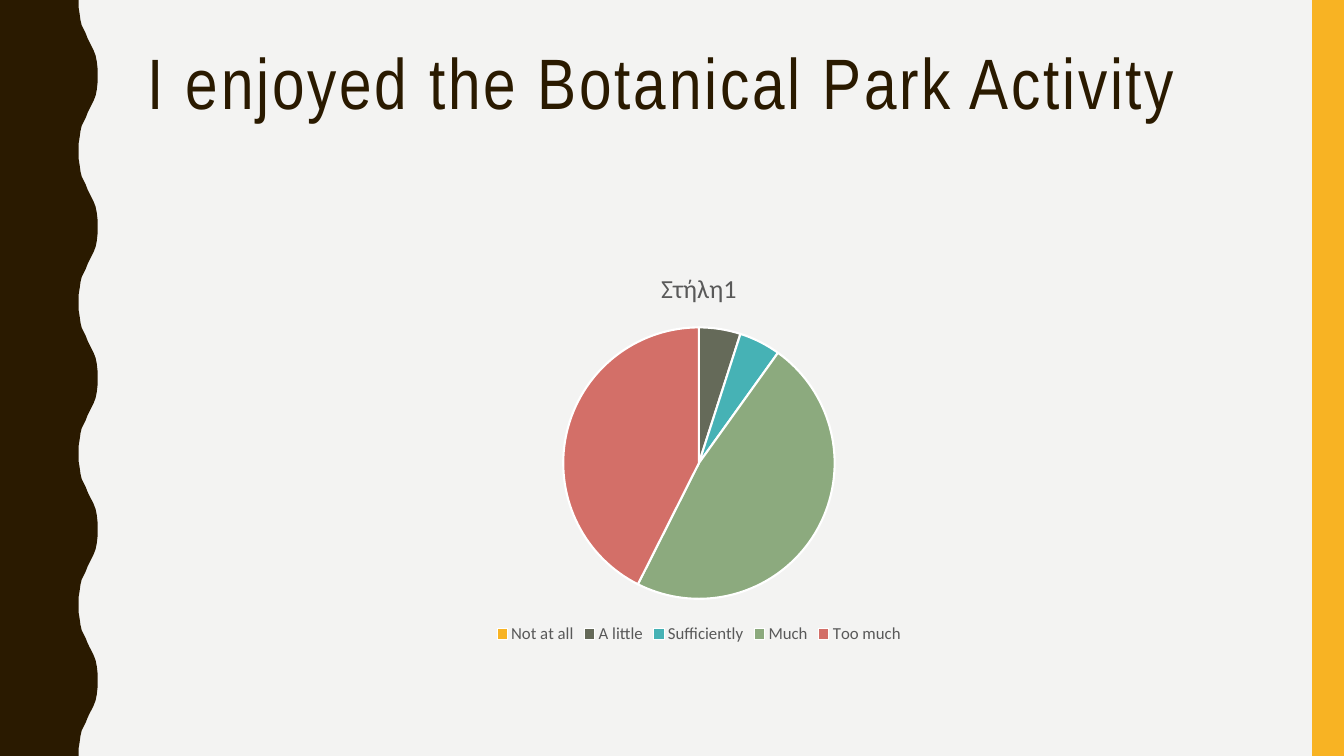
from pptx import Presentation
from pptx.chart.data import CategoryChartData
from pptx.dml.color import RGBColor
from pptx.enum.chart import XL_CHART_TYPE, XL_LEGEND_POSITION
from pptx.enum.shapes import MSO_SHAPE
from pptx.enum.text import MSO_ANCHOR
from pptx.util import Cm, Pt

TITLE = "I enjoyed the Botanical Park Activity"
SERIES = "Στήλη1"
SLICES = [
    ("Not at all", 0, "F8B323"),
    ("A little", 5, "656A59"),
    ("Sufficiently", 5, "46B2B5"),
    ("Much", 48, "8CAA7E"),
    ("Too much", 43, "D36F68"),
]
BROWN, GOLD, PAPER, GREY, WHITE = "2A1A00", "F8B323", "F3F3F2", "595959", "FFFFFF"
WIDE, HIGH = 33.87, 19.05
LEFT, SPAN = 3.48, 28.27
WAVES = 5
CURVE = [
    (1.98, 0), (1.98, 0.18), (2.01, 0.36), (2.03, 0.51), (2.06, 0.64),
    (2.11, 0.74), (2.16, 0.84), (2.21, 0.97), (2.26, 1.07), (2.31, 1.17),
    (2.36, 1.27), (2.41, 1.4), (2.44, 1.55), (2.46, 1.73), (2.46, 1.9),
]


def paint(item, color):
    item.fill.solid()
    item.fill.fore_color.rgb = RGBColor.from_string(color)


def style(font, name, size, color):
    font.name = name
    font.size = Pt(size)
    font.bold = False
    font.color.rgb = RGBColor.from_string(color)


def finish(shape, color):
    paint(shape, color)
    shape.line.fill.background()
    shape.shadow.inherit = False


def add_wave(slide):
    step = HIGH / WAVES
    points = []
    for n in range(WAVES):
        points += [(x, n * step + y) for x, y in CURVE]
        points += [(x, (n + 1) * step - y) for x, y in reversed(CURVE[:-1])]
    points += [(0, HIGH)]
    form = slide.shapes.build_freeform(0, 0)
    form.add_line_segments([(Cm(x), Cm(y)) for x, y in points], close=True)
    finish(form.convert_to_shape(), BROWN)


def add_title(slide):
    box = slide.shapes.add_textbox(Cm(LEFT), Cm(1.07), Cm(SPAN), Cm(4.14))
    frame = box.text_frame
    frame.word_wrap = True
    frame.vertical_anchor = MSO_ANCHOR.TOP
    frame.text = TITLE
    line = frame.paragraphs[0]
    line.line_spacing = 0.9
    run = line.runs[0]
    style(run.font, "Arial Narrow", 51, BROWN)
    run._r.get_or_add_rPr().set("spc", "200")


def add_pie(slide):
    data = CategoryChartData()
    data.categories = [name for name, _, _ in SLICES]
    data.add_series(SERIES, [value for _, value, _ in SLICES])
    chart = slide.shapes.add_chart(
        XL_CHART_TYPE.PIE, Cm(LEFT), Cm(6.35), Cm(SPAN), Cm(9.98), data
    ).chart
    style(chart.font, "Calibri", 10, "000000")
    chart.has_title = True
    frame = chart.chart_title.text_frame
    frame.text = SERIES
    style(frame.paragraphs[0].runs[0].font, "Calibri", 18.6, GREY)
    chart.has_legend = True
    chart.legend.position = XL_LEGEND_POSITION.BOTTOM
    chart.legend.include_in_layout = False
    style(chart.legend.font, "Calibri", 12, GREY)
    plot = chart.plots[0]
    plot.vary_by_categories = True
    for n, (_, _, color) in enumerate(SLICES):
        look = plot.series[0].points[n].format
        paint(look, color)
        look.line.color.rgb = RGBColor.from_string(WHITE)
        look.line.width = Pt(1.5)


def main():
    deck = Presentation()
    deck.slide_width, deck.slide_height = Cm(WIDE), Cm(HIGH)
    slide = deck.slides.add_slide(deck.slide_layouts[6])
    paint(slide.background, PAPER)
    add_wave(slide)
    band = slide.shapes.add_shape(
        MSO_SHAPE.RECTANGLE, Cm(33.07), 0, Cm(WIDE - 33.07), Cm(HIGH)
    )
    finish(band, GOLD)
    add_title(slide)
    add_pie(slide)
    deck.save("out.pptx")


if __name__ == "__main__":
    main()
